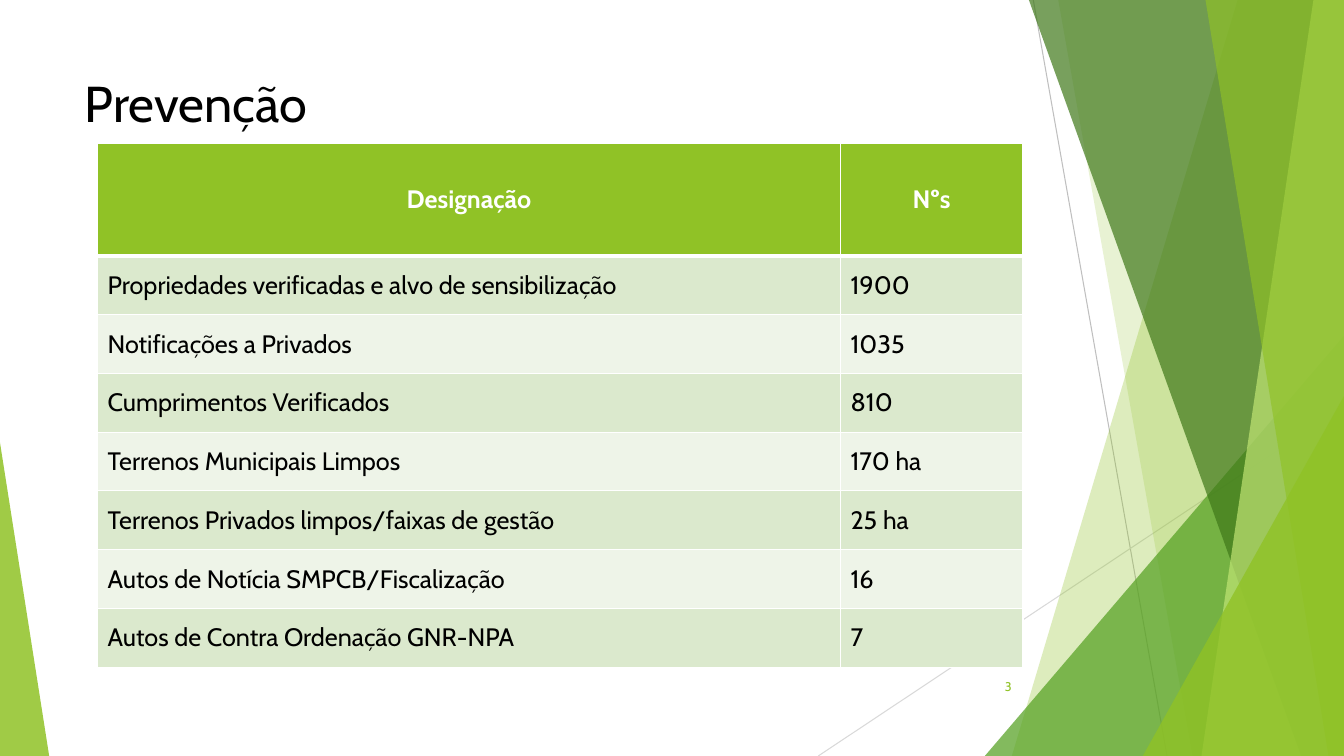
from lxml import etree
from pptx import Presentation
from pptx.dml.color import RGBColor
from pptx.enum.shapes import MSO_CONNECTOR, MSO_SHAPE
from pptx.enum.text import MSO_ANCHOR, PP_ALIGN
from pptx.oxml.ns import qn
from pptx.util import Cm, Pt

STRAIGHT = MSO_CONNECTOR.STRAIGHT
TRIANGLE = MSO_SHAPE.ISOSCELES_TRIANGLE
TOP, MIDDLE = MSO_ANCHOR.TOP, MSO_ANCHOR.MIDDLE
LEFT, CENTER, RIGHT = PP_ALIGN.LEFT, PP_ALIGN.CENTER, PP_ALIGN.RIGHT

WIDTH, HEIGHT = 33.87, 19.05
FONT = "Cabin"
GREEN, WHITE, BLACK, GREY = "90C226", "FFFFFF", "000000", "BFBFBF"
ROW_FILLS = ("DBE9CD", "EEF4E8")

PREVENTION = [
    ("Designação", "Nºs"),
    ("Propriedades verificadas e alvo de sensibilização", "1900"),
    ("Notificações a Privados", "1035"),
    ("Cumprimentos Verificados", "810"),
    ("Terrenos Municipais Limpos", "170 ha"),
    ("Terrenos Privados limpos/faixas de gestão", "25 ha"),
    ("Autos de Notícia SMPCB/Fiscalização", "16"),
    ("Autos de Contra Ordenação GNR-NPA", "7"),
]


def color(hex_code):
    return RGBColor.from_string(hex_code)


class FacetSlide:
    def __init__(self, deck):
        self.slide = deck.slides.add_slide(deck.slide_layouts[5])
        self.shapes = self.slide.shapes

    def set_text(self, frame, text, size, ink, align=LEFT, bold=False):
        frame.text = text
        paragraph = frame.paragraphs[0]
        paragraph.alignment = align
        font = paragraph.runs[0].font
        font.name, font.size, font.bold = FONT, Pt(size), bold
        font.color.rgb = color(ink)

    def title(self, text, left, top, width, height):
        heading = self.shapes.title
        heading.left, heading.top = Cm(left), Cm(top)
        heading.width, heading.height = Cm(width), Cm(height)
        heading.text_frame.vertical_anchor = TOP
        self.set_text(heading.text_frame, text, 36, BLACK)

    def page_number(self, text, left, top, width, height):
        box = self.shapes.add_textbox(Cm(left), Cm(top), Cm(width), Cm(height))
        box.text_frame.word_wrap = True
        box.text_frame.vertical_anchor = MIDDLE
        self.set_text(box.text_frame, text, 9, GREEN, RIGHT)

    def thin_line(self, x1, y1, x2, y2, ink):
        line = self.shapes.add_connector(STRAIGHT, Cm(x1), Cm(y1), Cm(x2), Cm(y2))
        line.line.color.rgb = color(ink)
        line.line.width = Pt(0.75)
        etree.SubElement(line._element.spPr, qn("a:effectLst"))

    def paint(self, shape, ink, opacity):
        shape.shadow.inherit = False
        shape.line.fill.background()
        shape.fill.solid()
        shape.fill.fore_color.rgb = color(ink)
        tint = shape._element.spPr.find(qn("a:solidFill"))[0]
        etree.SubElement(tint, qn("a:alpha"), val=str(opacity * 1000))

    def band(self, top_x, bottom_x, ink, opacity):
        outline = self.shapes.build_freeform(Cm(top_x), 0)
        corners = [(WIDTH, 0), (WIDTH, HEIGHT), (bottom_x, HEIGHT)]
        outline.add_line_segments([(Cm(x), Cm(y)) for x, y in corners])
        self.paint(outline.convert_to_shape(), ink, opacity)

    def corner(self, left, top, width, apex, ink, opacity):
        wedge = self.shapes.add_shape(
            TRIANGLE, Cm(left), Cm(top), Cm(width), Cm(HEIGHT - top))
        wedge.adjustments[0] = apex
        self.paint(wedge, ink, opacity)

    def cell_borders(self, cell, widths):
        properties = cell._tc.get_or_add_tcPr()
        for position, (side, width) in enumerate(widths.items()):
            edge = etree.Element(qn(f"a:ln{side}"), w=str(Pt(width)))
            fill = etree.SubElement(edge, qn("a:solidFill"))
            etree.SubElement(fill, qn("a:srgbClr"), val=WHITE)
            properties.insert(position, edge)

    def table(self, rows, left, top, column_widths, header_height, row_height):
        heights = [header_height] + [row_height] * (len(rows) - 1)
        grid = self.shapes.add_table(
            len(rows), len(column_widths), Cm(left), Cm(top),
            Cm(sum(column_widths)), Cm(sum(heights))).table
        for column, width in zip(grid.columns, column_widths):
            column.width = Cm(width)
        for r, (row, height) in enumerate(zip(rows, heights)):
            grid.rows[r].height = Cm(height)
            header = r == 0
            for c, text in enumerate(row):
                cell = grid.cell(r, c)
                cell.vertical_anchor = MIDDLE
                cell.fill.solid()
                cell.fill.fore_color.rgb = color(GREEN if header else ROW_FILLS[(r - 1) % 2])
                self.set_text(cell.text_frame, text, 18, WHITE if header else BLACK,
                              CENTER if header else LEFT, header)
                self.cell_borders(cell, {"L": 1, "R": 1, "T": 3 if r == 1 else 1,
                                         "B": 3 if header else 1})


def main():
    deck = Presentation()
    deck.slide_width, deck.slide_height = Cm(WIDTH), Cm(HEIGHT)
    page = FacetSlide(deck)

    page.thin_line(26.04, 0, 29.41, HEIGHT, GREY)
    page.thin_line(WIDTH, 10.24, 20.62, HEIGHT, "D9D9D9")
    page.band(31.19, 25.5, GREEN, 30)
    page.band(26.67, 30.05, GREEN, 20)
    page.corner(24.82, 8.46, WIDTH - 24.82, 1, "54A021", 72)
    page.band(25.93, 32.79, "3F7819", 70)
    page.band(33.1, 30.28, "C0E474", 70)
    page.band(30.38, 33.48, GREEN, 65)
    page.corner(28.8, 9.98, WIDTH - 28.8, 1, GREEN, 80)
    page.corner(0, 11.15, 1.24, 0, GREEN, 85)

    page.title("Prevenção", 1.88, 1.7, 23.88, 3.66)
    page.table(PREVENTION, 2.46, 3.61, (18.72, 4.6), 2.84, 1.48)
    page.page_number("3", 23.85, 16.79, 1.9, 1.02)
    deck.save("out.pptx")


if __name__ == "__main__":
    main()
